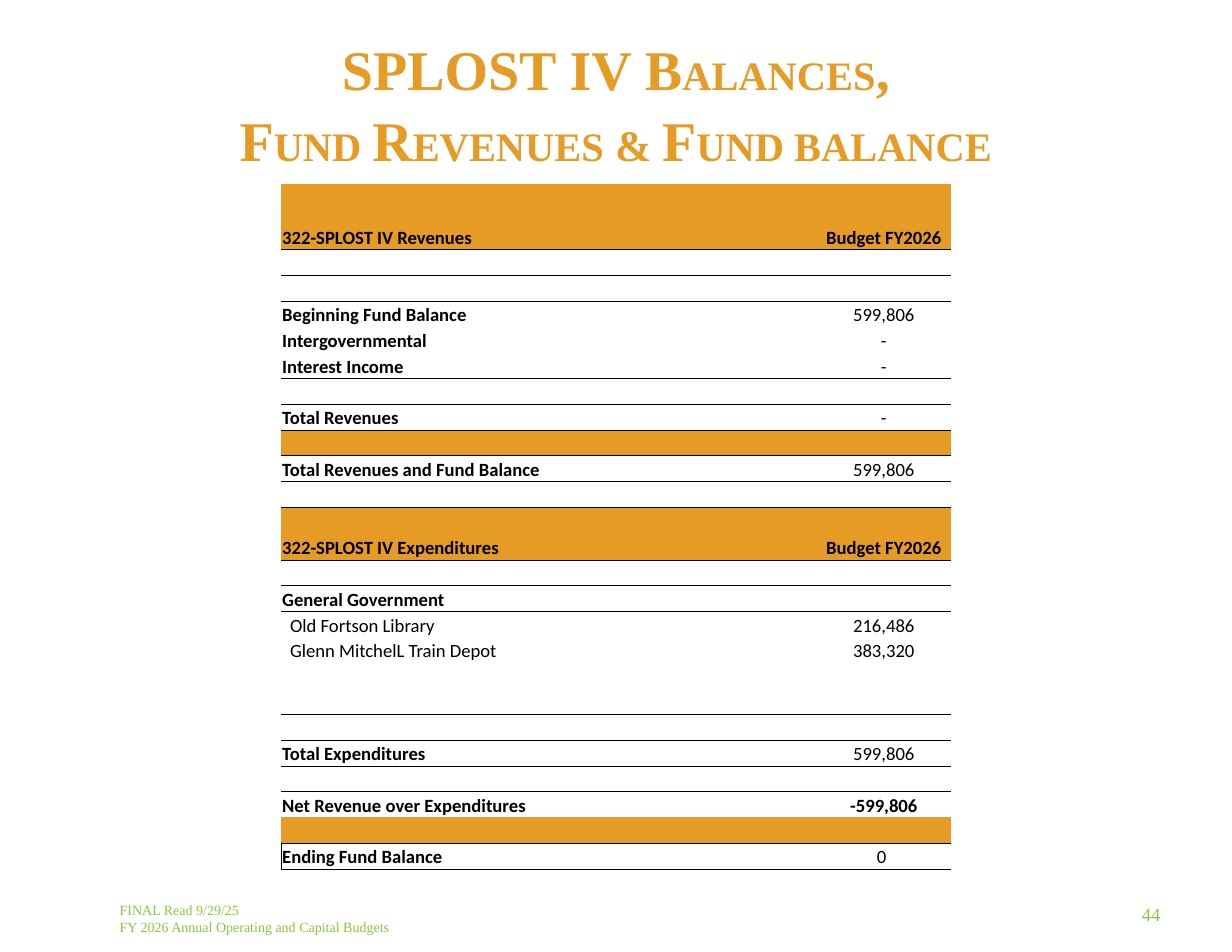
from lxml.etree import SubElement
from pptx import Presentation
from pptx.dml.color import RGBColor
from pptx.enum.text import MSO_ANCHOR, PP_ALIGN
from pptx.oxml.ns import qn
from pptx.util import Inches, Pt

WIDTH, HEIGHT = 11, 8.5
ORANGE, GREEN, BLACK = "E59B24", "8DC63F", "000000"
SERIF, SANS = "Times New Roman", "Calibri"
NO_GRID_STYLE = "{2D5ABB26-0587-4C30-8999-92F81FD0307C}"

TITLE_LINES = [
    [("SPLOST IV B", 36), ("ALANCES", 26), (",", 36)],
    [("F", 36), ("UND", 26), (" ", 28), ("R", 36), ("EVENUES", 26),
     (" & ", 28), ("F", 36), ("UND BALANCE", 26)],
]
FOOTER_LINES = ["FINAL Read 9/29/25", "FY 2026 Annual Operating and Capital Budgets"]

BLANK = ("", "", "")
BAND = ("", "", "band")
BUDGET_ROWS = [
    ("322-SPLOST IV Revenues", "Budget FY2026", "header line"),
    ("", "", "line"),
    BLANK,
    ("Beginning Fund Balance", "599,806", ""),
    ("Intergovernmental", "-", ""),
    ("Interest Income", "-", "line"),
    BLANK,
    ("Total Revenues", "-", "line"),
    BAND,
    ("Total Revenues and Fund Balance", "599,806", "line"),
    BLANK,
    ("322-SPLOST IV Expenditures", "Budget FY2026", "header line"),
    ("", "", "line"),
    ("General Government", "", ""),
    ("Old Fortson Library", "216,486", "item"),
    ("Glenn MitchelL Train Depot", "383,320", "item"),
    BLANK,
    ("", "", "line"),
    BLANK,
    ("Total Expenditures", "599,806", "line"),
    BLANK,
    ("Net Revenue over Expenditures", "-599,806", "net"),
    ("", "", "band line"),
    ("Ending Fund Balance", "0 ", "line boxed"),
]
COLUMN_SHARES = [0.49, 0.31, 0.2]
HEADER_HEIGHTS = {0: 0.59, 11: 0.47}


def color(value):
    return RGBColor.from_string(value)


def style(para, name, size, value, bold=False, align=PP_ALIGN.LEFT):
    para.alignment = align
    font = para.font
    font.name, font.bold = name, bold
    font.color.rgb = color(value)
    if size:
        font.size = Pt(size)


def add_box(page, left, top, width, height):
    box = page.shapes.add_textbox(Inches(left), Inches(top), Inches(width), Inches(height))
    box.text_frame.word_wrap = True
    return box.text_frame


def add_title(page, left, top, width, height):
    frame = add_box(page, left, top, width, height)
    frame.margin_left = frame.margin_right = frame.margin_bottom = Inches(0.04)
    frame.margin_top = Inches(0.09)
    for index, line in enumerate(TITLE_LINES):
        para = frame.add_paragraph() if index else frame.paragraphs[0]
        style(para, SERIF, None, ORANGE, True, PP_ALIGN.CENTER)
        if index:
            para.space_before = Pt(2.4)
        for text, size in line:
            span = para.add_run()
            span.text = text
            span.font.size = Pt(size)


def add_footer(page, left, top, width, height):
    frame = add_box(page, left, top, width, height)
    for index, text in enumerate(FOOTER_LINES):
        para = frame.add_paragraph() if index else frame.paragraphs[0]
        para.text = text
        style(para, SERIF, 9, GREEN)


def add_page_number(page, left, top, width, height):
    frame = add_box(page, left, top, width, height)
    frame.margin_top = Inches(0.24)
    para = frame.paragraphs[0]
    para.text = "44"
    style(para, SERIF, 12, GREEN, align=PP_ALIGN.RIGHT)


def add_border(cell, side):
    line = SubElement(cell._tc.get_or_add_tcPr(), qn(f"a:ln{side}"), w=str(Pt(0.5)))
    fill = SubElement(line, qn("a:solidFill"))
    SubElement(fill, qn("a:srgbClr"), val=BLACK)


def fill_cell(cell, text, bold, align, indent):
    cell.vertical_anchor = MSO_ANCHOR.BOTTOM
    cell.margin_left = Inches(indent)
    cell.margin_right = cell.margin_top = Inches(0.01)
    cell.margin_bottom = 0
    para = cell.text_frame.paragraphs[0]
    if text:
        para.text = text
    style(para, SANS, 12, BLACK, bold, align)
    if not text:
        SubElement(para._p, qn("a:endParaRPr"), sz="1200")


def add_budget_table(page, left, top, width, height):
    count = len(BUDGET_ROWS)
    table = page.shapes.add_table(count, len(COLUMN_SHARES), Inches(left), Inches(top),
                                  Inches(width), Inches(height)).table
    table.first_row = table.horz_banding = False
    table._tbl.tblPr.find(qn("a:tableStyleId")).text = NO_GRID_STYLE
    for column, share in zip(table.columns, COLUMN_SHARES):
        column.width = Inches(width * share)
    plain_height = (height - sum(HEADER_HEIGHTS.values())) / (count - len(HEADER_HEIGHTS))

    line_above = False
    for index, (label, amount, kind) in enumerate(BUDGET_ROWS):
        marks = kind.split()
        table.rows[index].height = Inches(HEADER_HEIGHTS.get(index, plain_height))
        bold_amount = "header" in marks or "net" in marks
        indent = 0.08 if "item" in marks else 0.01
        parts = [
            (label, "item" not in marks, PP_ALIGN.LEFT, indent),
            ("", False, PP_ALIGN.LEFT, 0.01),
            (amount, bold_amount, PP_ALIGN.CENTER, 0.01),
        ]
        for position, part in enumerate(parts):
            cell = table.cell(index, position)
            fill_cell(cell, *part)
            if "boxed" in marks and position == 0:
                add_border(cell, "L")
            if line_above:
                add_border(cell, "T")
            if "line" in marks:
                add_border(cell, "B")
            if "header" in marks or "band" in marks:
                cell.fill.solid()
                cell.fill.fore_color.rgb = color(ORANGE)
            else:
                cell.fill.background()
        line_above = "line" in marks


def main():
    deck = Presentation()
    deck.slide_width, deck.slide_height = Inches(WIDTH), Inches(HEIGHT)
    page = deck.slides.add_slide(deck.slide_layouts[6])
    add_page_number(page, 9.96, 7.82, 0.5, 0.58)
    add_footer(page, 0.97, 8, 3.01, 0.5)
    add_title(page, 0, 0.22, WIDTH, 1.63)
    add_budget_table(page, 2.51, 1.64, 5.98, 6.12)
    deck.save("out.pptx")


if __name__ == "__main__":
    main()
